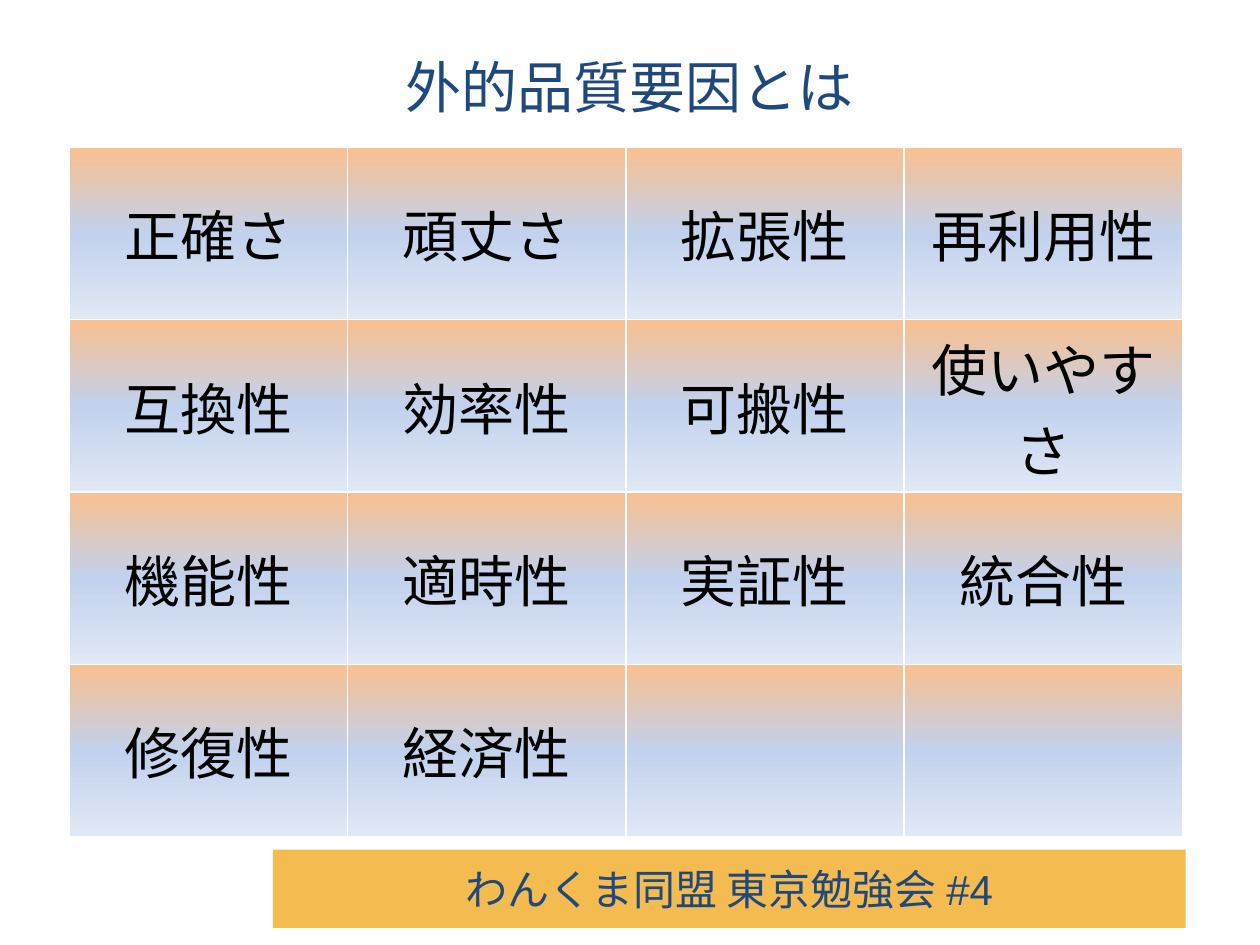
from dataclasses import dataclass

from lxml.etree import SubElement
from pptx import Presentation
from pptx.dml.color import RGBColor
from pptx.enum.shapes import MSO_SHAPE as SHAPE
from pptx.enum.text import MSO_ANCHOR as ANCHOR, PP_ALIGN as ALIGN
from pptx.oxml.ns import qn
from pptx.util import Pt

NAVY = RGBColor(0x1F, 0x49, 0x7D)
BLACK = RGBColor(0, 0, 0)
WHITE = RGBColor(0xFF, 0xFF, 0xFF)
AMBER = RGBColor(0xF3, 0xBB, 0x50)
PEACH = RGBColor(0xFA, 0xC0, 0x90)
SKY = RGBColor(0xC2, 0xD1, 0xED)
PALE = RGBColor(0xE1, 0xE8, 0xF5)

CELL_STOPS = ((0, PEACH), (50, SKY), (100, PALE))
COL_WIDTH = Pt(159)
ROW_HEIGHT = Pt(98.5)
FACTORS = (
    ("正確さ", "頑丈さ", "拡張性", "再利用性"),
    ("互換性", "効率性", "可搬性", "使いやすさ"),
    ("機能性", "適時性", "実証性", "統合性"),
    ("修復性", "経済性", "", ""),
)


@dataclass
class Label:
    text: str
    left: float
    top: float
    width: float
    height: float
    size: float
    fill: RGBColor | None = None


LABELS = (
    Label("わんくま同盟 東京勉強会 #4", 155.9, 485.5, 521.6, 44.8, 24, AMBER),
    Label("外的品質要因とは", 36, 21.6, 648, 55.4, 32),
)


def write(p, text: str, size: float, color: RGBColor) -> None:
    p.alignment = ALIGN.CENTER
    r = p.add_run()
    r.text = text
    for name, value in {"name": "Arial", "size": Pt(size), "bold": False}.items():
        setattr(r.font, name, value)
    r.font.color.rgb = color


def add_label(s, label: Label) -> None:
    box = [Pt(v) for v in (label.left, label.top, label.width, label.height)]
    if label.fill is None:
        sp = s.shapes.add_textbox(*box)
    else:
        sp = s.shapes.add_shape(SHAPE.RECTANGLE, *box)
        sp.shadow.inherit = False
        sp.fill.solid()
        sp.fill.fore_color.rgb = label.fill
        sp.line.fill.background()
    tf = sp.text_frame
    for name, value in {"word_wrap": True, "vertical_anchor": ANCHOR.MIDDLE}.items():
        setattr(tf, name, value)
    write(tf.paragraphs[0], label.text, label.size, NAVY)


def add_color(parent, color: RGBColor) -> None:
    SubElement(parent, qn("a:srgbClr"), val=str(color))


def style_cell(cell) -> None:
    cell.vertical_anchor = ANCHOR.MIDDLE
    pr = cell._tc.get_or_add_tcPr()
    for side in "LRTB":
        ln = SubElement(pr, qn(f"a:ln{side}"), w=str(Pt(1)))
        add_color(SubElement(ln, qn("a:solidFill")), WHITE)
    grad = SubElement(pr, qn("a:gradFill"), rotWithShape="1")
    stops = SubElement(grad, qn("a:gsLst"))
    for percent, color in CELL_STOPS:
        add_color(SubElement(stops, qn("a:gs"), pos=str(percent * 1000)), color)
    SubElement(grad, qn("a:lin"), ang=str(90 * 60000), scaled="0")


def add_factor_table(s) -> None:
    rows, cols = len(FACTORS), len(FACTORS[0])
    table = s.shapes.add_table(
        rows, cols, Pt(39.6), Pt(84.2), COL_WIDTH * cols, ROW_HEIGHT * rows
    ).table
    for name in ("first_row", "horz_banding"):
        setattr(table, name, False)
    for col in table.columns:
        col.width = COL_WIDTH
    for row, texts in zip(table.rows, FACTORS):
        row.height = ROW_HEIGHT
        for cell, text in zip(row.cells, texts):
            style_cell(cell)
            if text:
                write(cell.text_frame.paragraphs[0], text, 32, BLACK)


def main() -> None:
    prs = Presentation()
    prs.slide_width, prs.slide_height = Pt(720), Pt(540)
    s = prs.slides.add_slide(prs.slide_layouts[6])
    for label in LABELS:
        add_label(s, label)
    add_factor_table(s)
    prs.save("out.pptx")


if __name__ == "__main__":
    main()
